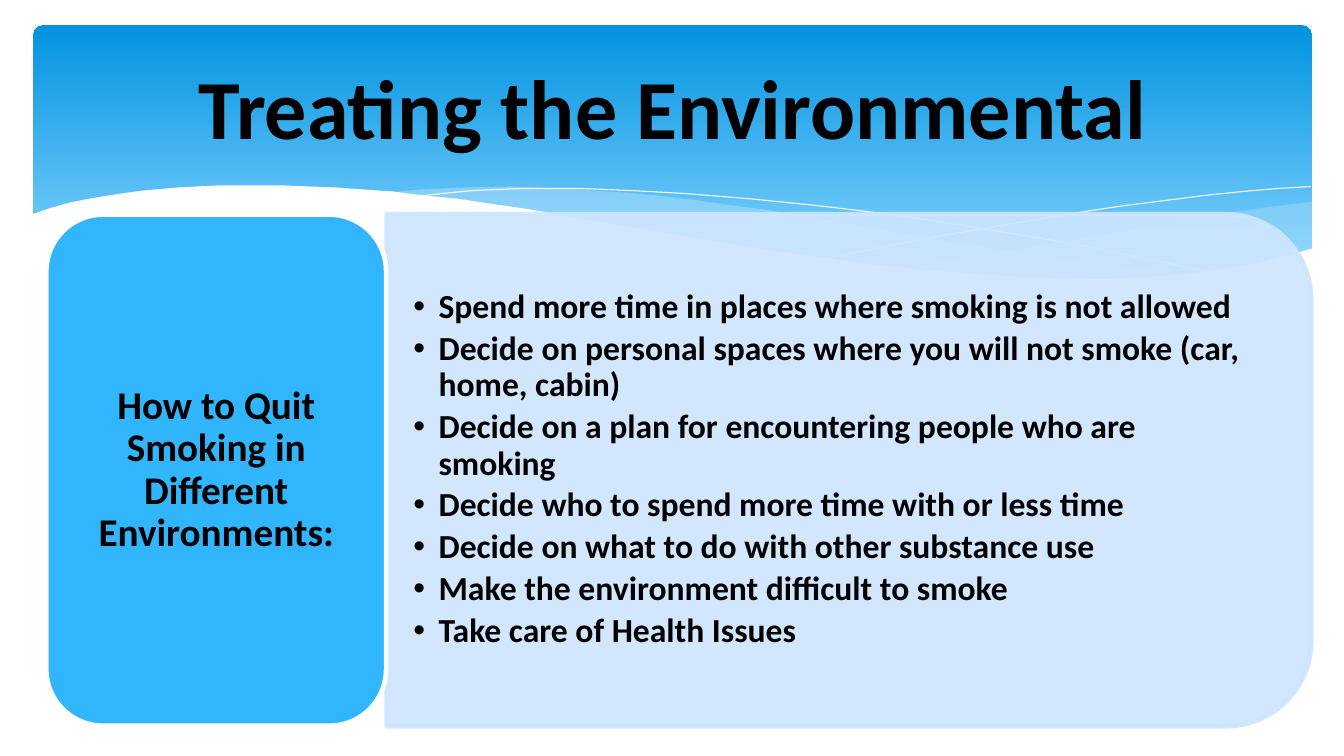
from dataclasses import dataclass

from lxml import etree
from pptx import Presentation
from pptx.dml.color import RGBColor
from pptx.enum.shapes import MSO_SHAPE
from pptx.enum.text import MSO_ANCHOR, MSO_AUTO_SIZE, PP_ALIGN
from pptx.oxml.ns import qn
from pptx.util import Inches, Pt

ROUNDED, ROUNDED_TOP = MSO_SHAPE.ROUNDED_RECTANGLE, MSO_SHAPE.ROUND_2_SAME_RECTANGLE
MIDDLE, NO_FIT = MSO_ANCHOR.MIDDLE, MSO_AUTO_SIZE.NONE
CENTER, LEFT = PP_ALIGN.CENTER, PP_ALIGN.LEFT


@dataclass(frozen=True)
class Theme:
    font: str = "Calibri"
    ink: RGBColor = RGBColor.from_string("000000")
    white: RGBColor = RGBColor.from_string("FFFFFF")
    sky_top: RGBColor = RGBColor.from_string("0293E0")
    sky_bottom: RGBColor = RGBColor.from_string("83D3FE")
    mist: RGBColor = RGBColor.from_string("C6E7FC")
    panel: RGBColor = RGBColor.from_string("CEE5FE")
    label: RGBColor = RGBColor.from_string("31B6FD")
    title_size: Pt = Pt(60)
    label_size: Pt = Pt(28)
    list_size: Pt = Pt(24)
    outline: Pt = Pt(3.35)


THEME = Theme()


def paint(shape, fill=None, line=None, width=0, opacity=100):
    """Set fill and outline, None meaning none, with opacity in percent."""
    shape.shadow.inherit = False
    for part, color in ((shape.fill, fill), (shape.line.fill, line)):
        if color is None:
            part.background()
        else:
            part.solid()
            part.fore_color.rgb = color
    if line is not None:
        shape.line.width = width
    if opacity < 100:
        for color in shape.element.spPr.iter(qn("a:srgbClr")):
            etree.SubElement(color, qn("a:alpha")).set("val", str(opacity * 1000))


def write(shape, lines, size, align, inset, after=0, spacing=0.9):
    """Fill a shape with bold paragraphs; inset is (side, top) in inches."""
    frame = shape.text_frame
    side, top = (Inches(length) for length in inset)
    settings = {"word_wrap": True, "auto_size": NO_FIT, "vertical_anchor": MIDDLE,
                "margin_left": side, "margin_right": side,
                "margin_top": top, "margin_bottom": top}
    for name, value in settings.items():
        setattr(frame, name, value)
    frame.text = "\n".join(lines)
    for para in frame.paragraphs:
        for name, value in {"alignment": align, "line_spacing": spacing,
                            "space_before": Pt(0), "space_after": Pt(after)}.items():
            setattr(para, name, value)
        for span in para.runs:
            for name, value in {"name": THEME.font, "size": size, "bold": True}.items():
                setattr(span.font, name, value)
            span.font.color.rgb = THEME.ink


deck = Presentation()
deck.slide_width, deck.slide_height = Inches(13.33), Inches(7.5)
page = deck.slides.add_slide(deck.slide_layouts[1])
title, body = page.placeholders

# Banner
banner = page.shapes.add_shape(
    ROUNDED, Inches(0.33), Inches(0.25), Inches(12.68), Inches(2.7))
banner.adjustments[0] = 0.034
paint(banner)
banner.fill.gradient()
banner.fill.gradient_angle = 270
stops = zip(banner.fill.gradient_stops, (0, 0.9), (THEME.sky_top, THEME.sky_bottom))
for stop, position, color in stops:
    stop.position = position
    stop.color.rgb = color

# Waves, from back to front: points in inches, closed or open, look
waves = [
    ([(13.01, 2), (12.46, 2.07), (11.88, 2.16), (11.1, 2.3), (10.38, 2.42),
      (9.72, 2.53), (9.11, 2.62), (8.82, 2.65), (9.4, 2.71), (9.93, 2.75),
      (10.41, 2.77), (10.85, 2.78), (11.26, 2.77), (11.63, 2.74), (11.96, 2.7),
      (12.28, 2.65), (12.57, 2.59), (12.84, 2.52), (13.01, 2.47)],
     True, {"fill": THEME.mist, "opacity": 29}),
    ([(11.9, 2.73), (11.54, 2.69), (11.16, 2.65), (10.76, 2.6), (10.34, 2.54),
      (9.89, 2.47), (9.41, 2.4), (8.91, 2.31), (8.39, 2.22), (7.98, 2.14),
      (7.59, 2.08), (7.21, 2.03), (6.86, 1.98), (6.52, 1.94), (6.19, 1.91),
      (5.89, 1.89), (5.6, 1.87), (5.06, 1.85), (4.59, 1.86), (4.18, 1.88),
      (3.82, 1.91), (4.31, 1.96), (4.83, 2.03), (5.39, 2.11), (5.99, 2.22),
      (6.54, 2.32), (7.06, 2.4), (7.55, 2.48), (8.02, 2.55), (8.46, 2.61),
      (8.87, 2.66), (9.26, 2.7), (9.63, 2.74), (9.98, 2.76), (10.46, 2.78),
      (11.04, 2.78), (11.43, 2.77), (11.9, 2.73)],
     True, {"fill": THEME.mist, "opacity": 40}),
    ([(4.12, 1.95), (4.38, 1.92), (4.7, 1.89), (5.16, 1.87), (5.77, 1.87),
      (6.25, 1.89), (6.8, 1.92), (7.42, 1.97), (8.11, 2.04), (8.86, 2.13),
      (9.7, 2.26), (10.6, 2.41), (11.08, 2.51), (11.58, 2.61), (12.1, 2.72)],
     False, {"line": THEME.white}),
    ([(8.18, 2.57), (8.7, 2.46), (9.27, 2.35), (9.97, 2.23), (10.75, 2.1),
      (11.15, 2.04), (11.55, 1.99), (11.94, 1.94), (12.32, 1.9), (12.67, 1.87),
      (13, 1.85)],
     False, {"line": THEME.white}),
    ([(13.03, 2.46), (12.79, 2.53), (12.54, 2.59), (12.27, 2.65), (11.98, 2.69),
      (11.67, 2.73), (11.34, 2.75), (10.97, 2.77), (10.58, 2.76), (10.15, 2.75),
      (9.69, 2.72), (9.18, 2.68), (8.63, 2.62), (8.04, 2.54), (7.4, 2.45),
      (6.71, 2.33), (5.96, 2.2), (5.21, 2.07), (4.86, 2.02), (4.53, 1.97),
      (4.21, 1.94), (3.9, 1.9), (3.61, 1.88), (3.33, 1.86), (2.82, 1.84),
      (2.14, 1.84), (1.76, 1.86), (1.42, 1.89), (1.13, 1.93), (0.89, 1.97),
      (0.69, 2.01), (0.48, 2.07), (0.31, 2.13), (0.31, 3.29), (13.03, 3.29)],
     True, {"fill": THEME.white}),
]
for points, closed, look in waves:
    start, *others = [(Inches(x), Inches(y)) for x, y in points]
    builder = page.shapes.build_freeform(*start)
    builder.add_line_segments(others, close=closed)
    paint(builder.convert_to_shape(), **look)

# Panel behind the list, turned so that its rounded end points right
panel = page.shapes.add_shape(
    ROUNDED_TOP, Inches(5.88), Inches(0.08), Inches(5.08), Inches(9.17))
panel.rotation = 90
paint(panel, THEME.panel, THEME.panel, THEME.outline, opacity=90)

label = page.shapes.add_shape(
    ROUNDED, Inches(0.46), Inches(2.13), Inches(3.37), Inches(5.07))
paint(label, THEME.label, THEME.white, THEME.outline)
write(label, ["How to Quit Smoking in Different Environments:"],
      THEME.label_size, CENTER, inset=(0.28, 0.22))

# Title and list stand in front of the banner and the panel
places = [(title, (0.67, 0.37, 12, 1.37)), (body, (3.83, 2.37, 8.92, 4.58))]
for holder, place in places:
    holder.left, holder.top, holder.width, holder.height = map(Inches, place)
    holder.element.getparent().append(holder.element)

write(title, ["Treating the Environmental"], THEME.title_size, CENTER,
      inset=(0.1, 0.05), spacing=1.0)
write(body, [
    "Spend more time in places where smoking is not allowed",
    "Decide on personal spaces where you will not smoke (car, home, cabin)",
    "Decide on a plan for encountering people who are smoking",
    "Decide who to spend more time with or less time",
    "Decide on what to do with other substance use",
    "Make the environment difficult to smoke",
    "Take care of Health Issues",
], THEME.list_size, LEFT, inset=(0.27, 0.14), after=4)
for para in body.text_frame.paragraphs:
    layout = para._p.get_or_add_pPr()
    layout.set("marL", str(Inches(0.25)))
    layout.set("indent", str(Inches(-0.25)))
    etree.SubElement(layout, qn("a:buChar")).set("char", "•")

deck.save("out.pptx")
